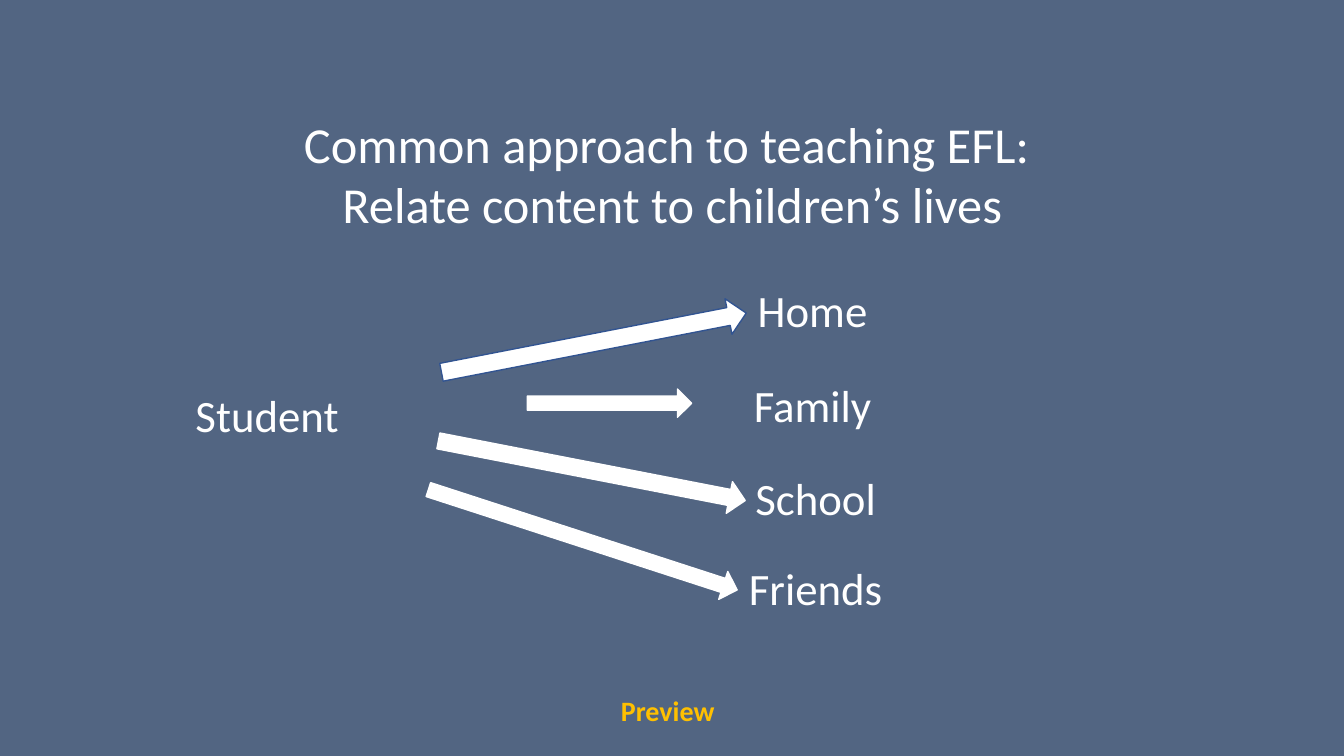
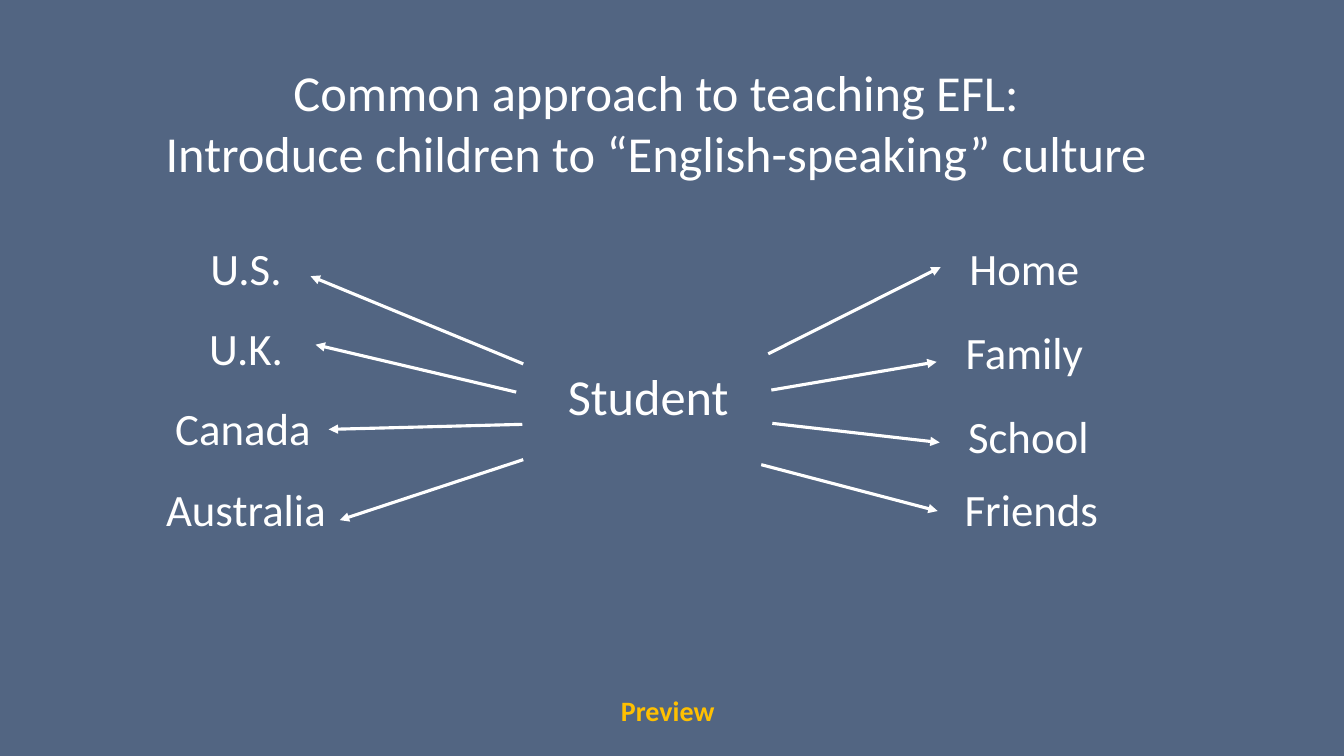
from pptx import Presentation
from pptx.util import Pt
from pptx.dml.color import RGBColor
from pptx.enum.shapes import MSO_CONNECTOR, MSO_SHAPE
from pptx.enum.text import PP_ALIGN
from pptx.oxml.ns import qn
from lxml import etree

LINE = MSO_CONNECTOR.STRAIGHT
ARROW = MSO_SHAPE.RIGHT_ARROW
LEFT, MID = PP_ALIGN.LEFT, PP_ALIGN.CENTER

# Shared style: 100 px to the inch
PX = 9144
WIDE, HIGH = 1333, 750
FONT = "Calibri"
BACK, WHITE, GOLD, BLUE = "526582", "FFFFFF", "FFC000", "325491"
TITLE, LABEL, FOOT = 36, 32, 20
LABEL_W, LABEL_H = 300, 64

# Slide 1: title place and lines, labels, block arrows
RELATE = {
    "at": (92, 107),
    "title": ["Common approach to teaching EFL: ",
              "Relate content to children’s lives"],
    "hub": ("Student", 115, 380, LABEL),
    "labels": [("Home", 656, 276), ("Family", 656, 370),
               ("School", 659, 462), ("Friends", 659, 551)],
    # left, top, width, height, turn, edge
    "blocks": [(435, 322, 308, 36, 349, BLUE), (523, 386, 163, 28, 0, WHITE),
               (432, 451, 310, 32, 11, WHITE), (417, 521, 322, 29, 18, WHITE)],
    "rays": [],
}

# Slide 2: title place and lines, labels, thin arrows
CULTURE = {
    "at": (76, 56),
    "title": ["Common approach to teaching EFL:",
              "Introduce children to “English-speaking” culture"],
    "hub": ("Student", 493, 357, TITLE),
    "labels": [("U.S.", 94, 234), ("U.K.", 94, 313),
               ("Canada", 91, 393), ("Australia", 94, 473),
               ("Home", 866, 234), ("Family", 866, 317),
               ("School", 870, 401), ("Friends", 873, 473)],
    "blocks": [],
    # from x, y, to x, y
    "rays": [(762, 351, 933, 265), (765, 387, 929, 359),
             (766, 420, 932, 439), (755, 461, 930, 507),
             (519, 361, 308, 274), (512, 389, 313, 342),
             (518, 421, 326, 426), (519, 456, 337, 516)],
}


def px(*nums):
    return [n * PX for n in nums]


def tint(code):
    return RGBColor.from_string(code)


def write(slide, lines, box, size, color=WHITE, align=MID, bold=False, gap=1.0):
    frame = slide.shapes.add_textbox(*px(*box)).text_frame
    frame.word_wrap = True
    frame.text = "\n".join(lines)
    for para in frame.paragraphs:
        para.alignment = align
        para.line_spacing = gap
        for run in para.runs:
            font = run.font
            font.name, font.size, font.bold = FONT, Pt(size), bold
            font.color.rgb = tint(color)


def block(slide, x, y, w, h, turn, edge):
    shape = slide.shapes.add_shape(ARROW, *px(x, y, w, h))
    shape.rotation = turn
    shape.shadow.inherit = False
    shape.fill.solid()
    shape.fill.fore_color.rgb = tint(WHITE)
    shape.line.color.rgb = tint(edge)
    shape.line.width = Pt(1)


def ray(slide, *ends):
    line = slide.shapes.add_connector(LINE, *px(*ends))
    line.line.color.rgb = tint(WHITE)
    line.line.width = Pt(2.25)
    props = line._element.spPr
    etree.SubElement(props.find(qn("a:ln")), qn("a:tailEnd"), type="triangle")
    etree.SubElement(props, qn("a:effectLst"))


def build(deck, page):
    slide = deck.slides.add_slide(deck.slide_layouts[6])
    fill = slide.background.fill
    fill.solid()
    fill.fore_color.rgb = tint(BACK)

    # Footer and title
    write(slide, ["Preview"], (606, 687, 120, 42), FOOT, GOLD, LEFT, True, 0.9)
    write(slide, page["title"], (*page["at"], 1150, 476), TITLE)

    # Hub, then the words around it
    word, x, y, size = page["hub"]
    write(slide, [word], (x, y, LABEL_W, LABEL_H), size)
    for word, x, y in page["labels"]:
        write(slide, [word], (x, y, LABEL_W, LABEL_H), LABEL)

    # Arrows
    for item in page["blocks"]:
        block(slide, *item)
    for item in page["rays"]:
        ray(slide, *item)


def main():
    deck = Presentation()
    deck.slide_width, deck.slide_height = px(WIDE, HIGH)
    for page in (RELATE, CULTURE):
        build(deck, page)
    deck.save("out.pptx")


if __name__ == "__main__":
    main()
